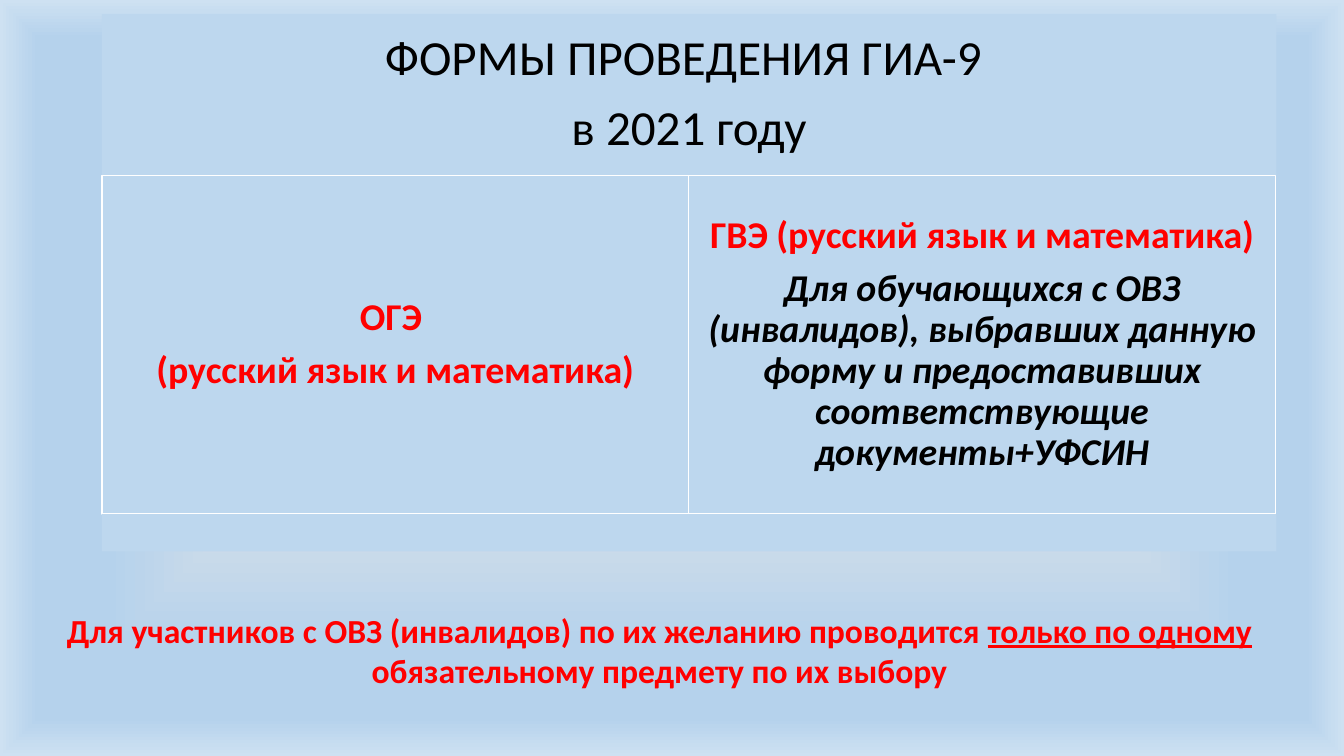
from pptx import Presentation
from pptx import util as u
from pptx.dml.color import RGBColor
from pptx.enum import shapes, text
from pptx.oxml import parse_xml
from pptx.oxml.ns import nsdecls

PALE = RGBColor(0xBD, 0xD7, 0xEE)
WHITE = RGBColor(0xFF, 0xFF, 0xFF)
BLACK = RGBColor(0x00, 0x00, 0x00)
RED = RGBColor(0xFF, 0x00, 0x00)

PX = 9144  # EMU in one px, 100 px to the inch
STOPS = [(8, "E7E6E6"), (72, "B5D2EC"), (90, "B5D2EC"), (100, "CEE1F2")]


class Deck:
    font = "Calibri"

    def __init__(self, wide, high):
        self.prs = Presentation()
        self.prs.slide_width, self.prs.slide_height = wide * PX, high * PX
        self.slide = self.prs.slides.add_slide(self.prs.slide_layouts[5])

    def backdrop(self, stops):
        marks = "".join(
            f'<a:gs pos="{pos * 1000}"><a:srgbClr val="{tint}"/></a:gs>'
            for pos, tint in stops)
        self.slide._element.cSld.insert(0, parse_xml(
            f'<p:bg {nsdecls("p", "a")}><p:bgPr><a:gradFill rotWithShape="1">'
            f'<a:gsLst>{marks}</a:gsLst><a:path path="shape">'
            '<a:fillToRect l="50000" t="50000" r="50000" b="50000"/></a:path>'
            '</a:gradFill><a:effectLst/></p:bgPr></p:bg>'))

    def label(self, shape, paras, size, inset=None, tight=True):
        """Each paragraph is a list of runs: (words, colour, styles)."""
        frame = shape.text_frame
        frame.word_wrap = True
        frame.auto_size = text.MSO_AUTO_SIZE.NONE
        if inset is not None:
            frame.vertical_anchor = text.MSO_ANCHOR.MIDDLE
            frame.margin_left = frame.margin_right = inset * PX
            frame.margin_top = frame.margin_bottom = inset * PX
        for i, runs in enumerate(paras):
            para = frame.add_paragraph() if i else frame.paragraphs[0]
            para.alignment = text.PP_ALIGN.CENTER
            if tight:
                para.line_spacing = 0.9
                para.space_after = u.Pt(round(size * 0.35))
            for words, tint, style in runs:
                run = para.add_run()
                run.text = words
                font = run.font
                font.name, font.size = self.font, u.Pt(size)
                font.color.rgb = tint
                font.bold = "b" in style
                font.italic = "i" in style
                font.underline = "u" in style

    def title(self, x, y, w, h, paras):
        head = self.slide.shapes.title
        head.left, head.top, head.width, head.height = (
            n * PX for n in (x, y, w, h))
        head.fill.solid()
        head.fill.fore_color.rgb = PALE
        self.label(head, paras, 35, 15)

    def box(self, x, y, w, h, paras=(), edge=None):
        rect = self.slide.shapes.add_shape(
            shapes.MSO_SHAPE.RECTANGLE, x * PX, y * PX, w * PX, h * PX)
        rect.shadow.inherit = False
        rect.fill.solid()
        rect.fill.fore_color.rgb = PALE
        if edge is None:
            rect.line.fill.background()
        else:
            rect.line.color.rgb = edge
            rect.line.width = u.Pt(1)
        if paras:
            self.label(rect, paras, 27, 11)

    def note(self, x, y, w, h, paras):
        area = self.slide.shapes.add_textbox(x * PX, y * PX, w * PX, h * PX)
        self.label(area, paras, 24, tight=False)


def main():
    deck = Deck(1333, 750)
    deck.backdrop(STOPS)

    # Title band
    left, wide, half = 101, 1165, 582
    deck.title(left, 14, wide, 160, [
        [("ФОРМЫ ПРОВЕДЕНИЯ ГИА-9 ", BLACK, "")],
        [("в 2021 году", BLACK, "")]])

    # Two exam forms side by side
    forms = [
        [[("ОГЭ ", RED, "b")],
         [("(русский язык и математика)", RED, "b")]],
        [[("ГВЭ (русский язык и математика)", RED, "b")],
         [("Для обучающихся с ОВЗ (инвалидов), выбравших данную форму и "
           "предоставивших соответствующие документы+УФСИН", BLACK, "bi")]]]
    for i, paras in enumerate(forms):
        deck.box(left + i * half, 174, half, 336, paras, WHITE)

    # Strip under the forms
    deck.box(left, 510, wide, 37)

    # Closing remark
    deck.note(33, 600, 1242, 91, [[
        ("Для участников с ОВЗ (инвалидов) по их желанию проводится ", RED, "b"),
        ("только по одному ", RED, "bu"),
        ("обязательному предмету по их выбору", RED, "b")]])

    deck.prs.save("out.pptx")


if __name__ == "__main__":
    main()
